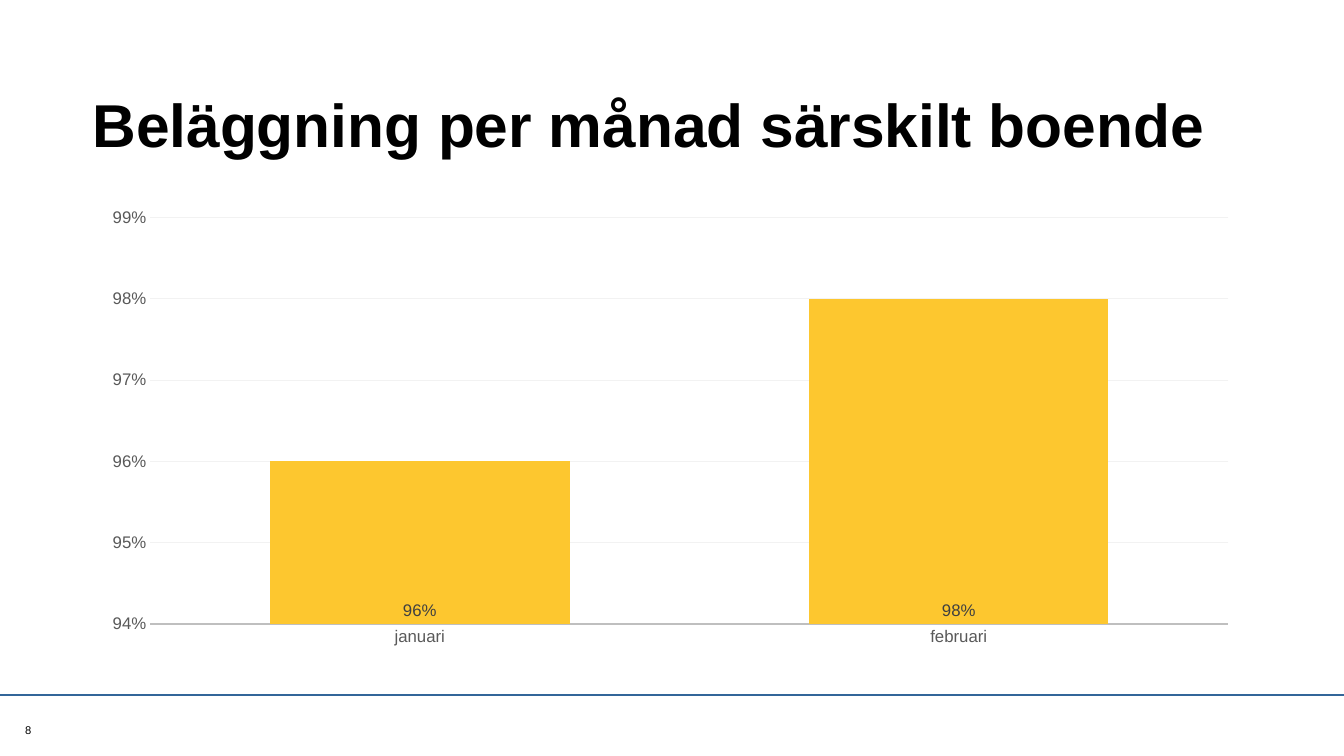
from lxml import etree
from pptx import Presentation
from pptx.chart import data as cd
from pptx.dml.color import RGBColor
from pptx.enum import chart as ce, shapes, text
from pptx.oxml import parse_xml
from pptx.oxml.ns import nsdecls, qn
from pptx.util import Pt

TITLE = "Beläggning per månad särskilt boende"
PAGE = "8"
MONTHS = ["januari", "februari"]
RATES = [0.96, 0.98]
COLORS = {
    "ink": "000000", "rule": "336699", "bar": "FDC72F", "axis": "BFBFBF",
    "grid": "F2F2F2", "tick": "595959", "label": "404040",
}
FONT = "Arial"
WIDTH, HEIGHT = 960, 540
LEFT, SPAN = 66, 828
RULE = 496.5
PLOT = {"x": 0.05, "y": 0.04, "w": 0.93, "h": 0.89}


def rgb(key):
    return RGBColor.from_string(COLORS[key])


def style(font, size, key, bold=False):
    font.name, font.size, font.bold = FONT, Pt(size), bold
    font.color.rgb = rgb(key)


def write(frame, words, size, anchor, bold=False):
    frame.margin_left = frame.margin_right = 0
    frame.margin_top = frame.margin_bottom = 0
    frame.word_wrap = True
    frame.auto_size = text.MSO_AUTO_SIZE.NONE
    frame.vertical_anchor = anchor
    para = frame.paragraphs[0]
    para.alignment = text.PP_ALIGN.LEFT
    run = para.add_run()
    run.text = words
    style(run.font, size, "ink", bold)
    return para


def add_rule(slide):
    rule = slide.shapes.add_connector(
        shapes.MSO_CONNECTOR.STRAIGHT, 0, Pt(RULE), Pt(WIDTH), Pt(RULE))
    rule.line.color.rgb = rgb("rule")
    rule.line.width = Pt(1.5)
    etree.SubElement(rule.element.spPr, qn("a:effectLst"))


def add_title(slide):
    title = slide.shapes.title
    title.left, title.top = Pt(LEFT), Pt(29)
    title.width, title.height = Pt(SPAN), Pt(85.5)
    para = write(title.text_frame, TITLE, 43.2, text.MSO_ANCHOR.BOTTOM, True)
    para.line_spacing = 0.9


def add_page(slide):
    box = slide.shapes.add_textbox(Pt(18), Pt(515.5), Pt(142), Pt(11.5))
    write(box.text_frame, PAGE, 8, text.MSO_ANCHOR.MIDDLE)


def set_axes(chart):
    for axis in (chart.category_axis, chart.value_axis):
        axis.major_tick_mark = axis.minor_tick_mark = ce.XL_TICK_MARK.NONE
        style(axis.tick_labels.font, 12, "tick")
    base = chart.category_axis.format.line
    base.color.rgb, base.width = rgb("axis"), Pt(1.25)
    scale = chart.value_axis
    scale.minimum_scale, scale.maximum_scale = 0.94, 0.99
    scale.major_unit = 0.01
    scale.format.line.fill.background()
    scale.tick_labels.number_format = "0%"
    scale.tick_labels.number_format_is_linked = False
    grid = scale.major_gridlines.format.line
    grid.color.rgb, grid.width = rgb("grid"), Pt(0.75)


def set_bars(plot):
    plot.gap_width, plot.overlap = 80, 25
    plot.vary_by_categories = False
    bars = plot.series[0]
    bars.invert_if_negative = False
    fill = bars.format.fill
    fill.solid()
    fill.fore_color.rgb = rgb("bar")
    tint = bars.format.element if hasattr(bars.format, "element") else None
    tint = bars._element.find(".//" + qn("a:srgbClr")) if tint is None else tint
    etree.SubElement(tint, qn("a:alpha"), val="70000")
    labels = bars.data_labels
    labels.show_value = True
    labels.position = ce.XL_LABEL_POSITION.INSIDE_BASE
    labels.number_format, labels.number_format_is_linked = "0%", False
    style(labels.font, 12, "label")


def set_area(chart):
    area = chart.plots[0]._element.getparent()
    for old in area.findall(qn("c:layout")):
        area.remove(old)
    parts = "".join(f'<c:{k} val="{v}"/>' for k, v in PLOT.items())
    area.insert(0, parse_xml(
        f'<c:layout {nsdecls("c")}><c:manualLayout>'
        '<c:layoutTarget val="inner"/><c:xMode val="edge"/><c:yMode val="edge"/>'
        f'{parts}</c:manualLayout></c:layout>'))


def add_bars(slide):
    data = cd.CategoryChartData(number_format="0%")
    data.categories = MONTHS
    data.add_series("Series 1", RATES)
    chart = slide.shapes.add_chart(
        ce.XL_CHART_TYPE.COLUMN_CLUSTERED,
        Pt(LEFT), Pt(142.5), Pt(SPAN), Pt(326), data).chart
    chart.has_title = chart.has_legend = False
    style(chart.font, 10, "ink")
    set_axes(chart)
    set_bars(chart.plots[0])
    set_area(chart)


def main():
    deck = Presentation()
    deck.slide_width, deck.slide_height = Pt(WIDTH), Pt(HEIGHT)
    slide = deck.slides.add_slide(deck.slide_layouts[5])
    add_rule(slide)
    add_page(slide)
    add_title(slide)
    add_bars(slide)
    deck.save("out.pptx")


if __name__ == "__main__":
    main()
